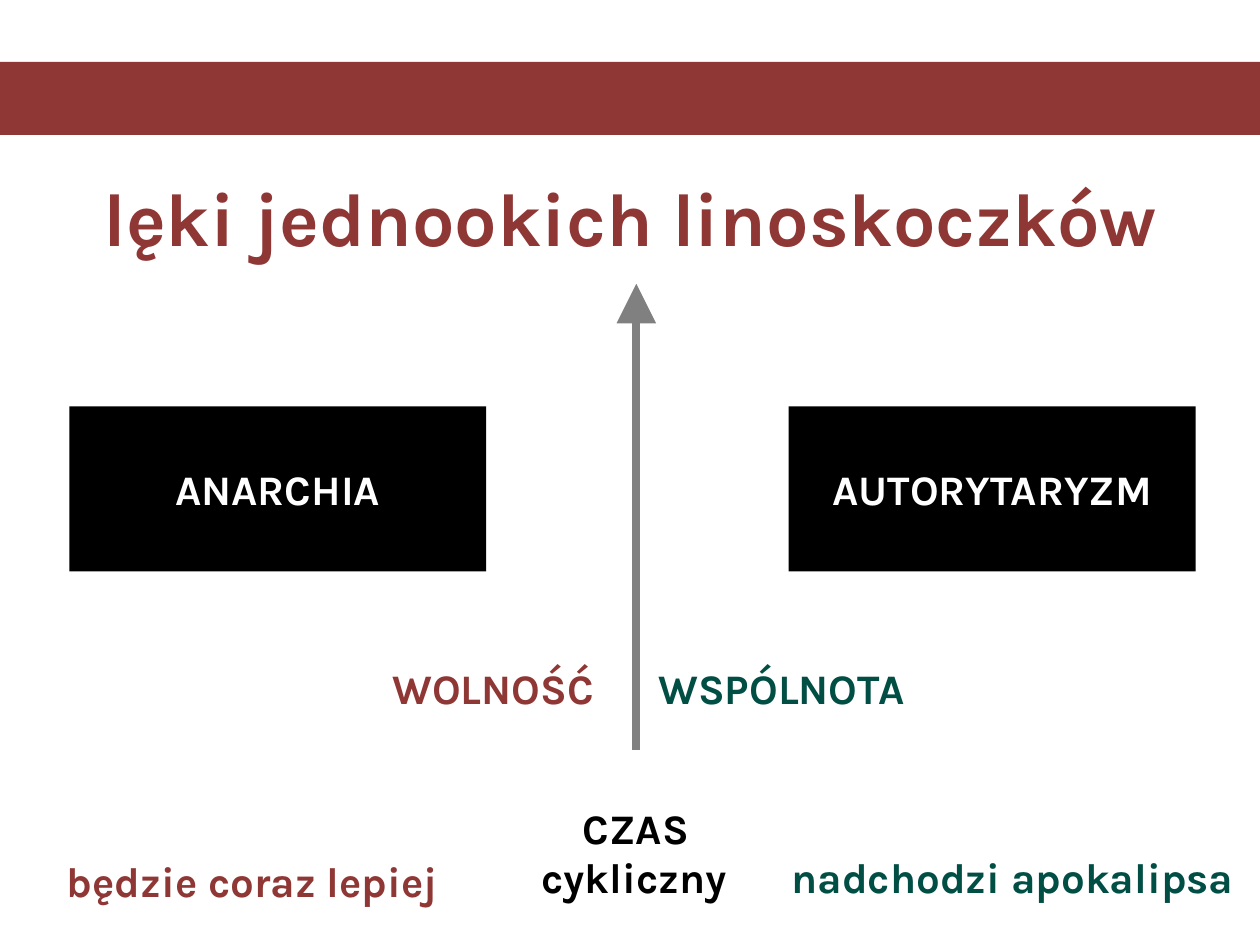
from pptx import Presentation
from pptx.dml.color import RGBColor
from pptx.enum.shapes import MSO_CONNECTOR, MSO_SHAPE
from pptx.enum.text import MSO_ANCHOR, MSO_AUTO_SIZE, PP_ALIGN
from pptx.oxml.ns import qn
from pptx.util import Pt
from lxml import etree

RECTANGLE = MSO_SHAPE.RECTANGLE
STRAIGHT = MSO_CONNECTOR.STRAIGHT
LEFT, CENTER = PP_ALIGN.LEFT, PP_ALIGN.CENTER
TOP, MIDDLE = MSO_ANCHOR.TOP, MSO_ANCHOR.MIDDLE
NO_FIT = MSO_AUTO_SIZE.NONE

COLORS = {
    "red": "8F3735",
    "green": "004E44",
    "black": "000000",
    "white": "FFFFFF",
    "gray": "808080",
}
FONT = "Karla"
SLIDE_WIDTH, SLIDE_HEIGHT = 720, 540

TITLE = "lęki jednookich linoskoczków"
TITLE_AREA = (0, 94.5, SLIDE_WIDTH, 59)
BAND_AREA = (0, 35.3, SLIDE_WIDTH, 41.8)

# text, left, width
FEARS = [
    ("ANARCHIA", 39.6, 238.2),
    ("AUTORYTARYZM", 450.7, 232.6),
]
FEAR_TOP, FEAR_HEIGHT = 232.2, 94.4

# text, left, top, width, color
LABELS = [
    ("WSPÓLNOTA", 369.2, 375.3, 172, "green"),
    ("WOLNOŚĆ", 217.2, 375.3, 141, "red"),
    ("CZAS", 326, 454.9, 78, "black"),
    ("będzie coraz lepiej", 31.2, 485.2, 241, "red"),
    ("nadchodzi apokalipsa", 445.2, 483, 276.5, "green"),
    ("cykliczny", 302.3, 483, 125.3, "black"),
]
LABEL_HEIGHT = 36

AXIS_X, AXIS_TOP, AXIS_BOTTOM = 363.6, 162.2, 428.6


def rgb(name):
    return RGBColor.from_string(COLORS[name])


def points(*lengths):
    return [Pt(length) for length in lengths]


def write(shape, text, *, color, size=24, align=LEFT, anchor=TOP, wrap=True):
    frame = shape.text_frame
    frame.auto_size = NO_FIT
    frame.word_wrap = wrap
    frame.vertical_anchor = anchor
    paragraph = frame.paragraphs[0]
    paragraph.alignment = align
    run = paragraph.add_run()
    run.text = text
    run.font.name = FONT
    run.font.size = Pt(size)
    run.font.bold = True
    run.font.color.rgb = rgb(color)


def add_block(slide, area, color):
    block = slide.shapes.add_shape(RECTANGLE, *points(*area))
    block.shadow.inherit = False
    block.fill.solid()
    block.fill.fore_color.rgb = rgb(color)
    block.line.fill.background()
    return block


def add_time_axis(slide):
    axis = slide.shapes.add_connector(
        STRAIGHT, *points(AXIS_X, AXIS_TOP, AXIS_X, AXIS_BOTTOM))
    axis.line.color.rgb = rgb("gray")
    axis.line.width = Pt(4.5)
    arrowhead = etree.SubElement(axis.line._get_or_add_ln(), qn("a:headEnd"))
    arrowhead.set("type", "triangle")
    arrowhead.set("w", "lg")
    arrowhead.set("len", "lg")
    etree.SubElement(axis._element.spPr, qn("a:effectLst"))


def main():
    deck = Presentation()
    deck.slide_width, deck.slide_height = points(SLIDE_WIDTH, SLIDE_HEIGHT)
    slide = deck.slides.add_slide(deck.slide_layouts[5])

    title = slide.shapes.title
    title.left, title.top, title.width, title.height = points(*TITLE_AREA)
    write(title, TITLE, color="red", size=43, align=CENTER)

    add_block(slide, BAND_AREA, "red")
    for text, left, width in FEARS:
        block = add_block(slide, (left, FEAR_TOP, width, FEAR_HEIGHT), "black")
        write(block, text, color="white", align=CENTER, anchor=MIDDLE)

    add_time_axis(slide)
    for text, left, top, width, color in LABELS:
        label = slide.shapes.add_textbox(*points(left, top, width, LABEL_HEIGHT))
        write(label, text, color=color, wrap=False)

    deck.save("out.pptx")


if __name__ == "__main__":
    main()
